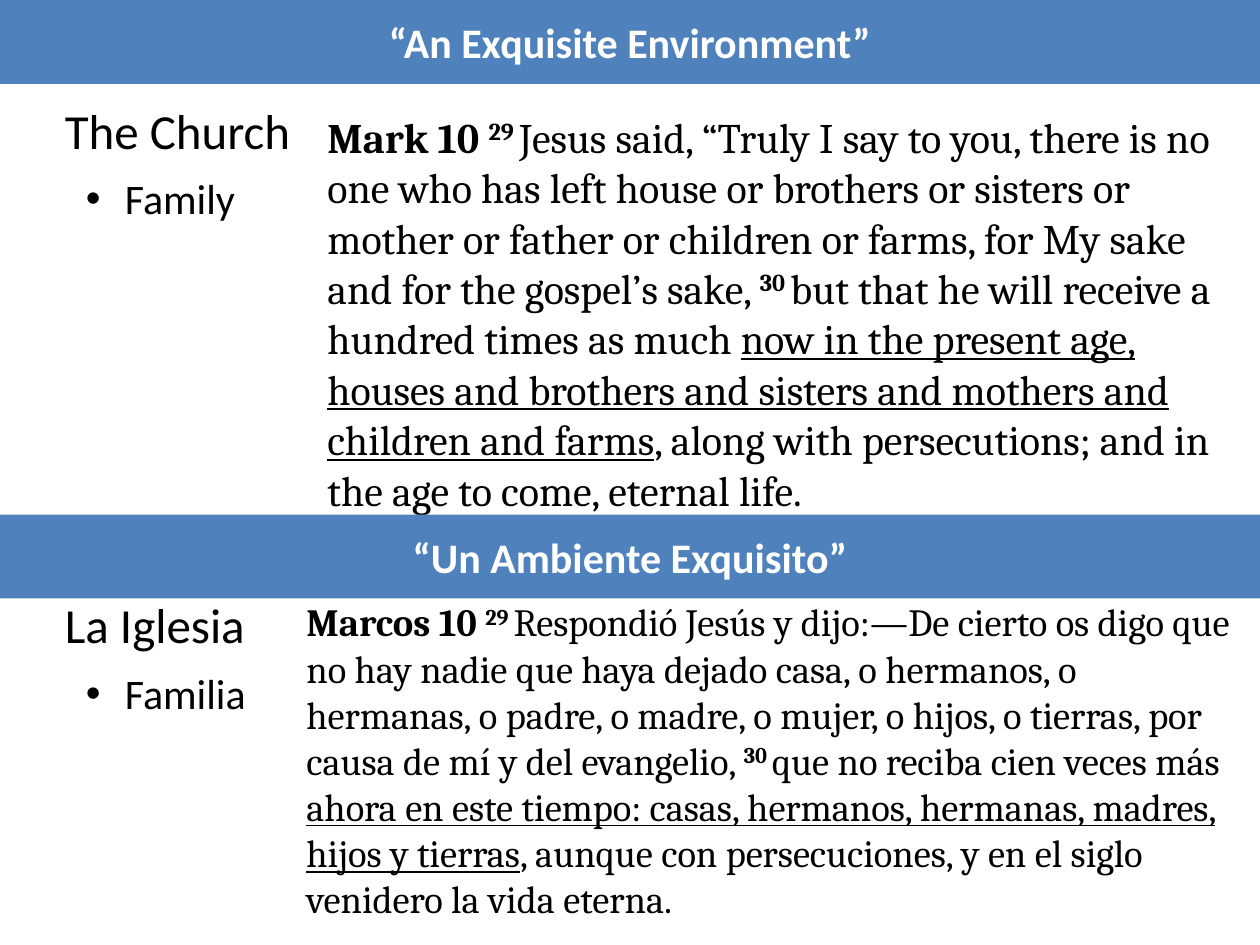
from lxml import etree
from pptx import Presentation
from pptx import util as u
from pptx.dml.color import RGBColor
from pptx.enum import shapes, text
from pptx.oxml.ns import qn

THEME = {
    "band": RGBColor(0x4F, 0x81, 0xBD),
    "light": RGBColor(0xFF, 0xFF, 0xFF),
    "dark": RGBColor(0, 0, 0),
    "sans": "Calibri",
    "serif": "Cambria",
    "heading": 28,
    "body": 24,
    "verse_es": 22,
}
FORMATS = {
    "plain": {"bold": False},
    "bold": {"bold": True},
    "super": {"bold": True},
    "underline": {"bold": False, "underline": True},
}

presentation = Presentation()
presentation.slide_width, presentation.slide_height = u.Inches(10), u.Inches(7.5)
COLUMN = presentation.slide_width / 120
ROW = presentation.slide_height / 90
BAND_ROWS = 8
slide = presentation.slides.add_slide(presentation.slide_layouts[5])


def place(shape, left, top, width, height):
    """Position a shape in grid columns and rows."""
    box = {"left": left * COLUMN, "top": top * ROW,
           "width": width * COLUMN, "height": height * ROW}
    for name, value in box.items():
        setattr(shape, name, int(value))


def write(shape, runs, font, size, color):
    """Fill the first paragraph with (words, format name) runs."""
    frame = shape.text_frame
    frame.word_wrap = True
    paragraph = frame.paragraphs[0]
    for words, style in runs:
        run = paragraph.add_run()
        run.text = words
        values = {"name": font, "size": u.Pt(size), **FORMATS[style]}
        for name, value in values.items():
            setattr(run.font, name, value)
        run.font.color.rgb = color
        if style == "super":
            run._r.get_or_add_rPr().set("baseline", "30000")
    return paragraph


sections = [
    {
        "band": "“An Exquisite Environment”", "band_top": 0,
        "heading": "The Church", "heading_top": 9,
        "bullet": "Family", "bullet_top": 15.84,
        "verse_box": (30, 10, 90, 40), "verse_size": THEME["body"],
        "verse": [
            ("Mark 10 ", "bold"),
            ("29 ", "super"),
            ("Jesus said, “Truly I say to you, there is no one who has left house or "
             "brothers or sisters or mother or father or children or farms, for My sake "
             "and for the gospel’s sake, ", "plain"),
            ("30 ", "super"),
            ("but that he will receive a hundred times as much ", "plain"),
            ("now in the present age, houses and brothers and sisters and mothers "
             "and children and farms", "underline"),
            (", along with persecutions; and in the age to come, eternal life. ", "plain"),
        ],
    },
    {
        "band": "“Un Ambiente Exquisito”", "band_top": 49,
        "heading": "La Iglesia", "heading_top": 56,
        "bullet": "Familia", "bullet_top": 63,
        "verse_box": (28, 56.4, 92, 32.3), "verse_size": THEME["verse_es"],
        "verse": [
            ("Marcos 10 ", "bold"),
            ("29 ", "super"),
            ("Respondió Jesús y dijo:—De cierto os digo que no hay nadie que haya dejado "
             "casa, o hermanos, o hermanas, o padre, o madre, o mujer, o hijos, o tierras, "
             "por causa de mí y del evangelio, ", "plain"),
            ("30 ", "super"),
            ("que no reciba cien veces más ", "plain"),
            ("ahora en este tiempo: casas, hermanos, hermanas, madres, hijos y tierras",
             "underline"),
            (", aunque con persecuciones, y en el siglo venidero la vida eterna.", "plain"),
        ],
    },
]

for section in sections:
    text_boxes = [
        ((5, section["heading_top"], 81, 6.84), [(section["heading"], "plain")],
         THEME["sans"], THEME["heading"]),
        ((7, section["bullet_top"], 49, 6), [(section["bullet"], "plain")],
         THEME["sans"], THEME["body"]),
        (section["verse_box"], section["verse"], THEME["serif"], section["verse_size"]),
    ]
    for box, runs, font, size in text_boxes:
        shape = slide.shapes.add_textbox(0, 0, 0, 0)
        place(shape, *box)
        paragraph = write(shape, runs, font, size, THEME["dark"])
        shape.text_frame.auto_size = text.MSO_AUTO_SIZE.SHAPE_TO_FIT_TEXT
        if runs[0][0] == section["bullet"]:
            properties = paragraph._p.get_or_add_pPr()
            properties.set("marL", str(u.Inches(0.31)))
            properties.set("indent", str(-u.Inches(0.31)))
            etree.SubElement(properties, qn("a:buFont")).set("typeface", "Arial")
            etree.SubElement(properties, qn("a:buChar")).set("char", "•")

    if section["band_top"] == 0:
        band = slide.shapes.title
    else:
        band = slide.shapes.add_shape(shapes.MSO_SHAPE.RECTANGLE, 0, 0, 0, 0)
        band.shadow.inherit = False
    place(band, 0, section["band_top"], 120, BAND_ROWS)
    band.fill.solid()
    band.fill.fore_color.rgb = THEME["band"]
    band.line.fill.background()
    paragraph = write(band, [(section["band"], "bold")],
                      THEME["sans"], THEME["body"], THEME["light"])
    paragraph.alignment = text.PP_ALIGN.CENTER
    band.text_frame.vertical_anchor = text.MSO_ANCHOR.MIDDLE
    band.text_frame.auto_size = text.MSO_AUTO_SIZE.NONE

presentation.save("out.pptx")
